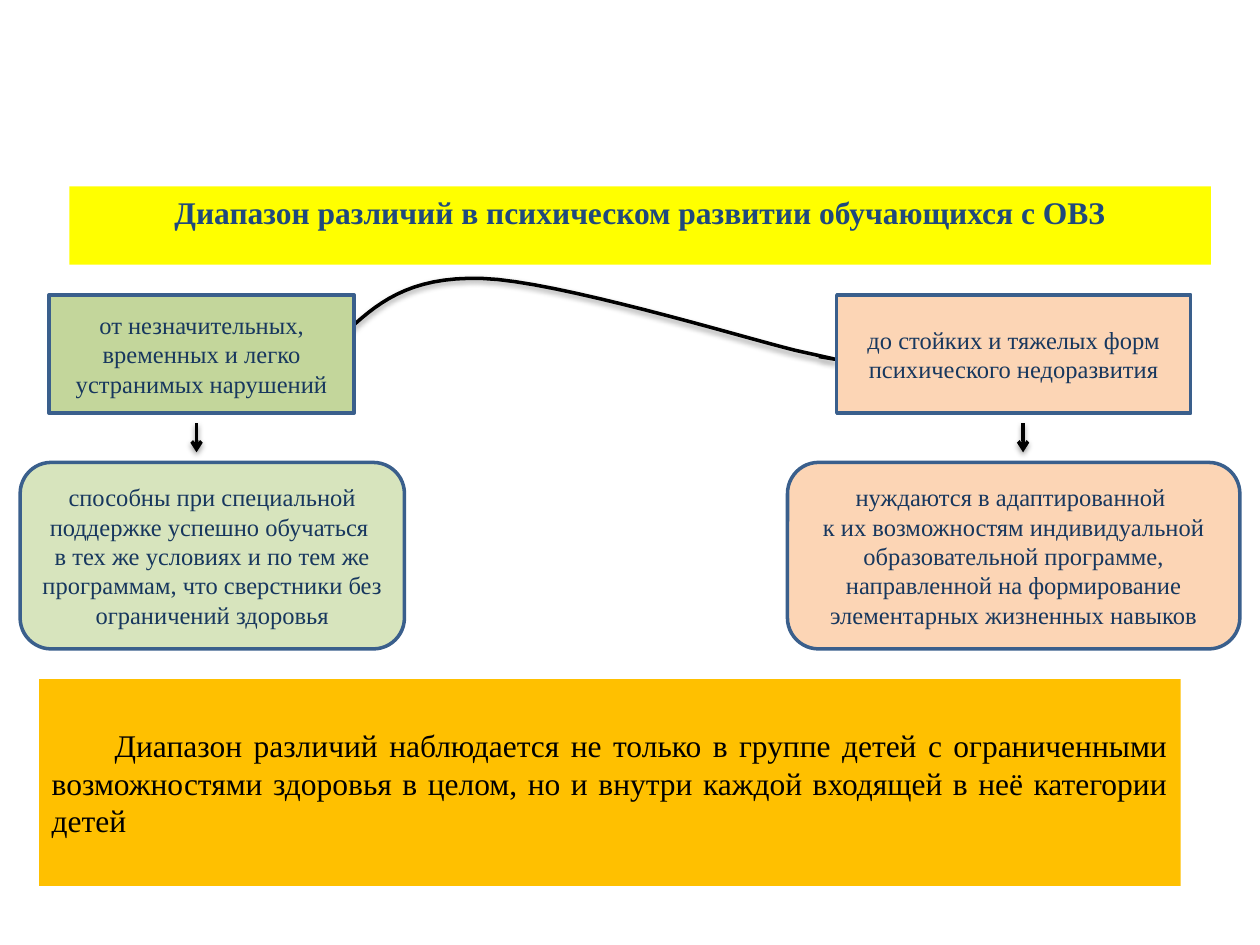
import dataclasses

import pptx
import pptx.dml.color
import pptx.enum.shapes
import pptx.enum.text
import pptx.oxml
import pptx.oxml.ns
import pptx.util

Inches = pptx.util.Inches
Pt = pptx.util.Pt
Shapes = pptx.enum.shapes.MSO_SHAPE
Align = pptx.enum.text.PP_ALIGN
Anchor = pptx.enum.text.MSO_ANCHOR


@dataclasses.dataclass(frozen=True)
class Theme:
    font: str = "Times New Roman"
    heading_size: int = 18
    body_size: int = 14
    line_width: int = 2
    heading_text: str = "1F497D"
    body_text: str = "17375E"
    black: str = "000000"
    outline: str = "3A5F8C"
    heading_fill: str = "FFFF00"
    conclusion_fill: str = "FFC000"
    mild_fill: str = "C3D69B"
    mild_detail_fill: str = "D7E4BD"
    severe_fill: str = "FCD5B5"


THEME = Theme()


def rgb(value):
    return pptx.dml.color.RGBColor.from_string(value)


def place(shape, box):
    shape.left, shape.top, shape.width, shape.height = map(Inches, box)


def paint(shape, fill):
    shape.fill.solid()
    shape.fill.fore_color.rgb = rgb(fill)


def draw_line(shape, color):
    shape.line.color.rgb = rgb(color)
    shape.line.width = Pt(THEME.line_width)


def write(shape, lines, size, color, align, anchor, bold=False):
    frame = shape.text_frame
    frame.text = "\n".join(lines)
    frame.word_wrap = True
    frame.auto_size = pptx.enum.text.MSO_AUTO_SIZE.NONE
    frame.vertical_anchor = anchor
    for paragraph in frame.paragraphs:
        paragraph.alignment = align
        paragraph.font.name = THEME.font
        paragraph.font.size = Pt(size)
        paragraph.font.bold = bold
        paragraph.font.color.rgb = rgb(color)


def add_soft_shadow(shape):
    properties = shape._element.spPr
    for effects in properties.findall(pptx.oxml.ns.qn("a:effectLst")):
        properties.remove(effects)
    properties.append(pptx.oxml.parse_xml(
        f'<a:effectLst {pptx.oxml.ns.nsdecls("a")}>'
        f'<a:outerShdw blurRad="{Pt(3.1)}" dist="{Pt(1.6)}" dir="5400000" rotWithShape="0">'
        f'<a:srgbClr val="{THEME.black}"><a:alpha val="38000"/></a:srgbClr>'
        '</a:outerShdw></a:effectLst>'))


def bezier_points(start, first, second, end, steps=16):
    for step in range(1, steps + 1):
        t = step / steps
        weights = ((1 - t) ** 3, 3 * t * (1 - t) ** 2, 3 * t * t * (1 - t), t ** 3)
        yield tuple(sum(weight * point[axis] for weight, point
                        in zip(weights, (start, first, second, end))) for axis in (0, 1))


def add_range_curve(slide, start, segments):
    points = [start]
    for segment in segments:
        points.extend(bezier_points(points[-1], *segment))
    first, *rest = [(Inches(x), Inches(y)) for x, y in points]
    builder = slide.shapes.build_freeform(*first)
    builder.add_line_segments(rest, close=False)
    curve = builder.convert_to_shape()
    curve.fill.background()
    draw_line(curve, THEME.black)
    add_soft_shadow(curve)


def add_card(slide, kind, box, fill, lines):
    card = slide.shapes.add_shape(kind, *map(Inches, box))
    card.shadow.inherit = False
    paint(card, fill)
    draw_line(card, THEME.outline)
    write(card, lines, THEME.body_size, THEME.body_text, Align.CENTER, Anchor.MIDDLE)


def add_down_arrow(slide, x, top, bottom):
    arrow = slide.shapes.add_connector(
        pptx.enum.shapes.MSO_CONNECTOR.STRAIGHT,
        Inches(x), Inches(top), Inches(x), Inches(bottom))
    draw_line(arrow, THEME.black)
    arrow.line._get_or_add_ln().append(pptx.oxml.parse_xml(
        f'<a:tailEnd {pptx.oxml.ns.nsdecls("a")} type="arrow"/>'))
    add_soft_shadow(arrow)


def add_branch(slide, level_box, level_fill, level, detail_box, detail_fill, detail, arrow_x):
    add_card(slide, Shapes.RECTANGLE, level_box, level_fill, level)
    add_down_arrow(slide, arrow_x, 3.36, 3.59)
    add_card(slide, Shapes.ROUNDED_RECTANGLE, detail_box, detail_fill, detail)


def fill_heading(heading, box):
    place(heading, box)
    paint(heading, THEME.heading_fill)
    write(heading, ["Диапазон различий в психическом развитии обучающихся с ОВЗ"],
          THEME.heading_size, THEME.heading_text, Align.CENTER, Anchor.TOP, bold=True)
    heading.text_frame.paragraphs[0].space_before = Pt(3.6)


def fill_conclusion(conclusion, box):
    place(conclusion, box)
    paint(conclusion, THEME.conclusion_fill)
    write(conclusion,
          ["Диапазон различий наблюдается не только в группе детей с ограниченными "
           "возможностями здоровья в целом, но и внутри каждой входящей в неё категории детей"],
          THEME.heading_size, THEME.black, Align.JUSTIFY, Anchor.MIDDLE)
    properties = conclusion.text_frame.paragraphs[0]._p.get_or_add_pPr()
    properties.set("marL", "0")
    properties.set("indent", str(Inches(0.5)))


def main():
    presentation = pptx.Presentation()
    presentation.slide_width = Inches(10)
    presentation.slide_height = Inches(7.5)
    slide = presentation.slides.add_slide(presentation.slide_layouts.get_by_name("Title Slide"))

    fill_heading(slide.placeholders[1], (0.55, 1.48, 9.06, 0.62))
    add_range_curve(slide, (2.73, 2.65), (
        ((2.98, 2.42), (3.23, 2.19), (3.83, 2.21)),
        ((4.42, 2.23), (5.87, 2.67), (6.31, 2.78)),
        ((6.76, 2.88), (6.63, 2.85), (6.5, 2.83)),
    ))
    add_branch(
        slide,
        (0.39, 2.34, 2.42, 0.94), THEME.mild_fill,
        ["от незначительных, временных и легко устранимых нарушений"],
        (0.16, 3.67, 3.05, 1.48), THEME.mild_detail_fill,
        ["способны при специальной поддержке успешно обучаться ",
         "в тех же условиях и по тем же программам, что сверстники без ограничений здоровья"],
        arrow_x=1.56)
    add_branch(
        slide,
        (6.64, 2.34, 2.81, 0.94), THEME.severe_fill,
        ["до стойких и тяжелых форм психического недоразвития"],
        (6.25, 3.67, 3.59, 1.48), THEME.severe_fill,
        ["нуждаются в адаптированной ",
         "к их возможностям индивидуальной образовательной программе, "
         "направленной на формирование элементарных жизненных навыков"],
        arrow_x=8.12)
    fill_conclusion(slide.shapes.title, (0.31, 5.39, 9.06, 1.64))

    presentation.save("out.pptx")


if __name__ == "__main__":
    main()
